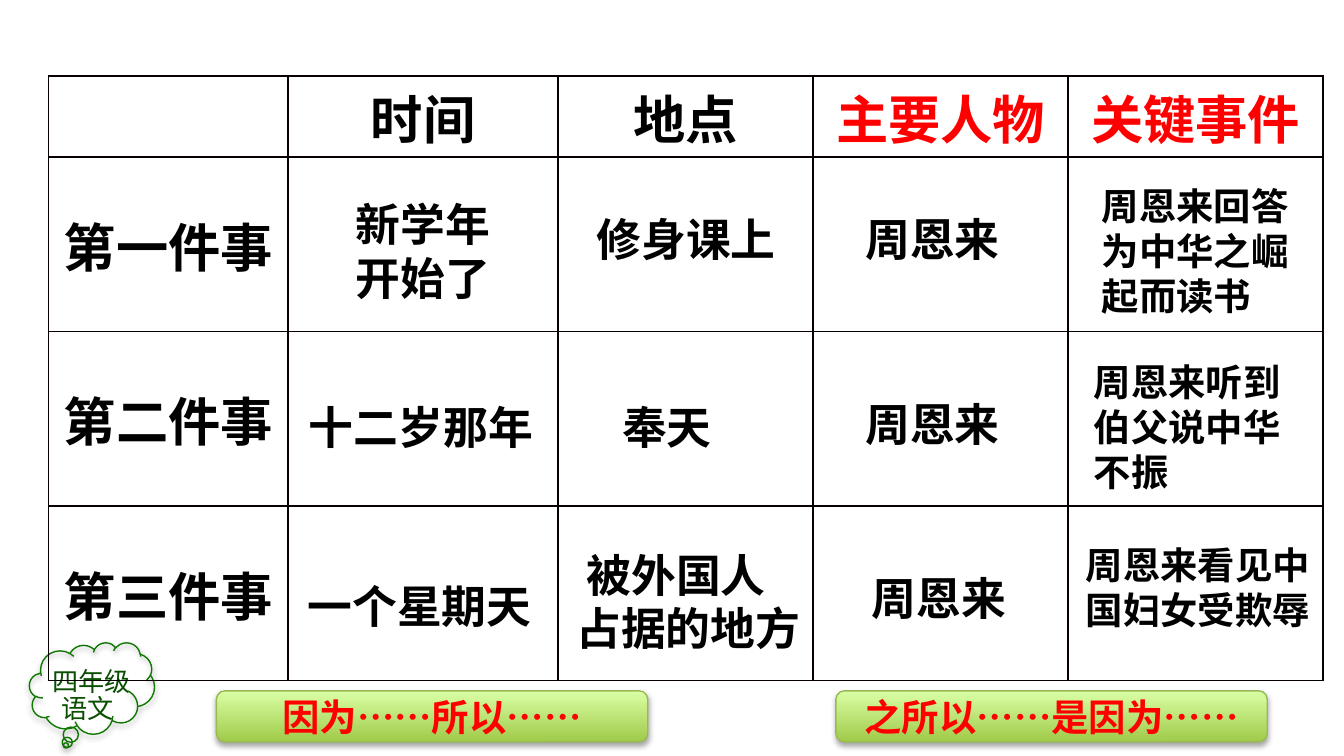
from lxml import etree
from pptx import Presentation
from pptx.dml.color import RGBColor
from pptx.enum import shapes, text
from pptx.oxml import ns
from pptx.util import Pt

SANS = "Noto Sans CJK SC"
BLACK, RED = "000000", "FF0000"


def tint(code):
    return RGBColor.from_string(code)


def node(parent, tag, **attrs):
    return etree.SubElement(parent, ns.qn(tag), **attrs)


class Page:
    """Style and current slide."""

    def __init__(self, slide):
        self.slide = slide

    def words(self, para, line, size, color=BLACK, bold=True, face=SANS):
        run = para.add_run()
        run.text = line
        font = run.font
        font.size, font.bold, font.name = Pt(size), bold, face
        font.color.rgb = tint(color)
        node(font._element, "a:ea", typeface=face)

    def label(self, box, lines, size, align=text.PP_ALIGN.LEFT, **style):
        frame = self.slide.shapes.add_textbox(*map(Pt, box)).text_frame
        frame.word_wrap = True
        frame.margin_top = Pt(6)
        for i, line in enumerate(lines):
            para = frame.add_paragraph() if i else frame.paragraphs[0]
            para.alignment = align
            para.line_spacing = Pt(size * 1.2)
            self.words(para, line, size, **style)

    def shape(self, kind, box, line):
        item = self.slide.shapes.add_shape(kind, *map(Pt, box))
        item.fill.background()
        item.line.color.rgb = tint(line)
        item.line.width = Pt(0.75)
        item.shadow.inherit = False
        glow = item._element.spPr.find(ns.qn("a:effectLst"))
        shade = node(glow, "a:outerShdw", blurRad=str(Pt(3.1)), dist=str(Pt(1.8)),
                     dir="5400000", rotWithShape="0")
        node(node(shade, "a:srgbClr", val=BLACK), "a:alpha", val="35000")
        return item

    def button(self, box, line):
        item = self.shape(shapes.MSO_SHAPE.ROUNDED_RECTANGLE, box, "98B955")
        item.fill.gradient()
        item.fill.gradient_angle = 90
        for stop, color in zip(item.fill.gradient_stops, ("A0CA4A", "DAFFA5")):
            stop.color.rgb = tint(color)
        frame = item.text_frame
        frame.vertical_anchor = text.MSO_ANCHOR.MIDDLE
        para = frame.paragraphs[0]
        para.alignment = text.PP_ALIGN.CENTER
        self.words(para, line, 20, RED)

    def cell(self, cell, line, color):
        cell.fill.background()
        cell.vertical_anchor = text.MSO_ANCHOR.MIDDLE
        cell.margin_left = cell.margin_right = Pt(5)
        cell.margin_top = cell.margin_bottom = 0
        if line:
            para = cell.text_frame.paragraphs[0]
            para.alignment = text.PP_ALIGN.CENTER
            self.words(para, line, 28, color)
        props = cell._tc.get_or_add_tcPr()
        for i, side in enumerate(("a:lnL", "a:lnR", "a:lnT", "a:lnB")):
            edge = etree.Element(ns.qn(side), w=str(Pt(1)))
            node(node(edge, "a:solidFill"), "a:srgbClr", val="080000")
            props.insert(i, edge)

    def table(self, left, top, cols, rows, heads, names):
        grid = self.slide.shapes.add_table(
            len(rows), len(cols), Pt(left), Pt(top), Pt(sum(cols)), Pt(sum(rows))).table
        grid.first_row = grid.horz_banding = False
        for col, width in zip(grid.columns, cols):
            col.width = Pt(width)
        for row, height in zip(grid.rows, rows):
            row.height = Pt(height)
        for r in range(len(rows)):
            for c in range(len(cols)):
                line = heads[c] if r == 0 else names[r] if c == 0 else ""
                self.cell(grid.cell(r, c), line, RED if r == 0 and c > 2 else BLACK)


def main():
    deck = Presentation()
    deck.slide_width, deck.slide_height = Pt(720), Pt(405)
    page = Page(deck.slides.add_slide(deck.slide_layouts[6]))

    # Class badge
    badge = dict(align=text.PP_ALIGN.CENTER, color="0A4F01", bold=False,
                 face="Noto Sans CJK JP")
    page.label((10, 350.6, 78.5, 24.5), ["四年级"], 14, **badge)
    page.label((-18, 365, 130, 24.5), ["语文"], 14, **badge)
    page.shape(shapes.MSO_SHAPE.CLOUD_CALLOUT, (15.8, 344.2, 67, 49), "0F7701")

    # Grid of the three events
    page.table(26, 40.6, [128.3, 144.7] + [136.6] * 3, [43.6] + [93.5] * 3,
               ["", "时间", "地点", "主要人物", "关键事件"],
               ["", "第一件事", "第二件事", "第三件事"])

    # Time, place and person
    for left, top, width, lines in (
            (183.6, 99.4, 89.3, ["新学年", "开始了"]),
            (312.5, 107.3, 112.5, ["修身课上"]),
            (456.5, 107.3, 104.4, ["周恩来"]),
            (158.4, 208.1, 140.4, ["十二岁那年"]),
            (326.2, 208.1, 84.2, ["奉天"]),
            (456.5, 206.6, 104.4, ["周恩来"]),
            (157.7, 303.8, 147.6, ["一个星期天"]),
            (301.7, 287.3, 157, [" 被外国人", "占据的地方"]),
            (460, 299.5, 104.4, ["周恩来"])):
        page.label((left, top, width, 7.2 + 28.8 * len(lines)), lines, 24)

    # Key events
    for left, top, width, high, line in (
            (583.2, 92.2, 125.3, 80, "周恩来回答为中华之崛起而读书"),
            (578.9, 186.5, 133, 80, "周恩来听到伯父说中华不振"),
            (574.6, 284.4, 137.5, 55.4, "周恩来看见中国妇女受欺辱")):
        page.label((left, top, width, high), [line], 20)

    # Sentence patterns
    for left, line in ((447.8, "之所以……是因为……"), (115.9, "因为……所以……")):
        page.button((left, 370.1, 231.1, 27.4), line)

    deck.save("out.pptx")


if __name__ == "__main__":
    main()
